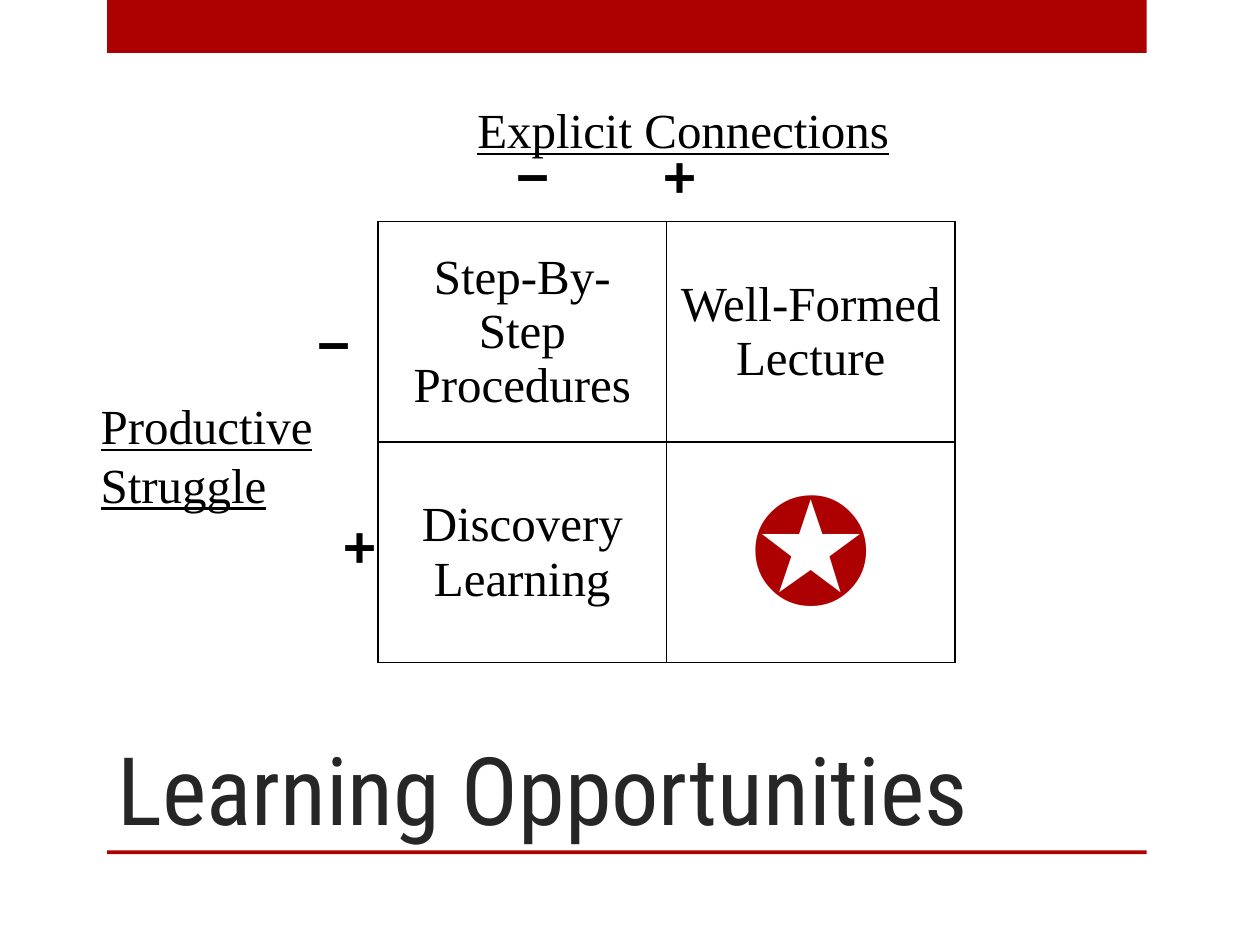
import pptx
import pptx.util
import pptx.dml.color
import pptx.enum.shapes
import pptx.enum.text
import pptx.oxml
import lxml.etree
from pptx.util import Inches, Pt

RGBColor = pptx.dml.color.RGBColor
ALIGN = pptx.enum.text.PP_ALIGN
ANCHOR = pptx.enum.text.MSO_ANCHOR
RED = RGBColor(0xAD, 0x01, 0x01)
BLACK = RGBColor(0, 0, 0)
DARK = RGBColor(0x26, 0x26, 0x26)
SERIF, SIGN_FONT = "Times New Roman", "Noto Sans CJK JP"

TITLE = "Learning Opportunities"
BARS = [(0, 0.42), (6.75, 0.03)]  # top, height
GRID = [
    ["Step-By-Step Procedures", "Well-Formed Lecture"],
    ["Discovery Learning", "✪"],
]
AXIS_LABELS = [
    ("Explicit Connections", (3.69, 0.74, 3.51, 0.57)),
    ("Productive\nStruggle", (0.7, 3.09, 1.9, 1.04)),
]
COLUMN_SIGNS = ("−\t+", (4, 1.09, 3.67, 0.64))
ROW_SIGNS = ("−\n+", (2.42, 2.42, 0.83, 2.26))
GRID_BOX = (3, 1.76, 4.58, 3.5)


def style(tf, font, size, color, **flags):
    for p in tf.paragraphs:
        for r in p.runs:
            r.font.name, r.font.size = font, Pt(size)
            r.font.color.rgb = color
            for name, value in flags.items():
                setattr(r.font, name, value)
            ea = lxml.etree.SubElement(r.font._element, pptx.oxml.ns.qn("a:ea"))
            ea.set("typeface", font)


def add_text(s, text, box, wrap, font, size, **flags):
    tf = s.shapes.add_textbox(*map(Inches, box)).text_frame
    tf.word_wrap = wrap
    tf.text = text
    style(tf, font, size, BLACK, **flags)
    return tf


def add_borders(cell):
    """Draw a 1 pt black line on all four sides, ahead of the cell's fill."""
    tc_pr = cell._tc.get_or_add_tcPr()
    for i, side in enumerate(("lnL", "lnR", "lnT", "lnB")):
        tc_pr.insert(i, pptx.oxml.parse_xml(
            f'<a:{side} {pptx.oxml.ns.nsdecls("a")} w="{Pt(1)}"><a:solidFill>'
            f'<a:srgbClr val="{BLACK}"/></a:solidFill></a:{side}>'))


def add_grid(s):
    rows, cols = len(GRID), len(GRID[0])
    table = s.shapes.add_table(rows, cols, *map(Inches, GRID_BOX)).table
    table.first_row = table.horz_banding = False
    for row, texts in zip(table.rows, GRID):
        for cell, text in zip(row.cells, texts):
            cell.text = text
            cell.vertical_anchor = ANCHOR.MIDDLE
            cell.text_frame.paragraphs[0].alignment = ALIGN.CENTER
            size, color = (88, RED) if text == "✪" else (28, BLACK)
            style(cell.text_frame, SERIF, size, color)
            cell.fill.background()
            add_borders(cell)


prs = pptx.Presentation()
prs.slide_width, prs.slide_height = Inches(10), Inches(7.5)
s = prs.slides.add_slide(prs.slide_layouts[5])

for top, height in BARS:
    bar = s.shapes.add_shape(pptx.enum.shapes.MSO_SHAPE.RECTANGLE,
                             *map(Inches, (0.85, top, 8.25, height)))
    bar.shadow.inherit = False
    bar.fill.solid()
    bar.fill.fore_color.rgb = RED
    bar.line.fill.background()

title = s.shapes.title
title.left, title.top, title.width, title.height = map(Inches, (0.83, 5, 7.42, 1.75))
tf = title.text_frame
tf.text = TITLE
tf.vertical_anchor = ANCHOR.BOTTOM
tf.paragraphs[0].alignment = ALIGN.LEFT
style(tf, "Roboto Condensed", 54, DARK)

add_grid(s)

for text, box in AXIS_LABELS:
    add_text(s, text, box, False, SERIF, 28, underline=True)

# A tab stop sets the plus over the second column.
tf = add_text(s, *COLUMN_SIGNS, True, SIGN_FONT, 32, bold=True)
p_pr = tf.paragraphs[0]._p.get_or_add_pPr()
p_pr.append(pptx.oxml.parse_xml(
    f'<a:tabLst {pptx.oxml.ns.nsdecls("a")}>'
    f'<a:tab pos="{Inches(1.17)}" algn="l"/></a:tabLst>'))

# Spacing and an indent set the plus beside the second row.
tf = add_text(s, *ROW_SIGNS, True, SIGN_FONT, 32, bold=True)
plus = tf.paragraphs[1]
plus.space_before = Pt(77)
plus._p.get_or_add_pPr().set("marL", str(Inches(0.21)))

prs.save("out.pptx")
